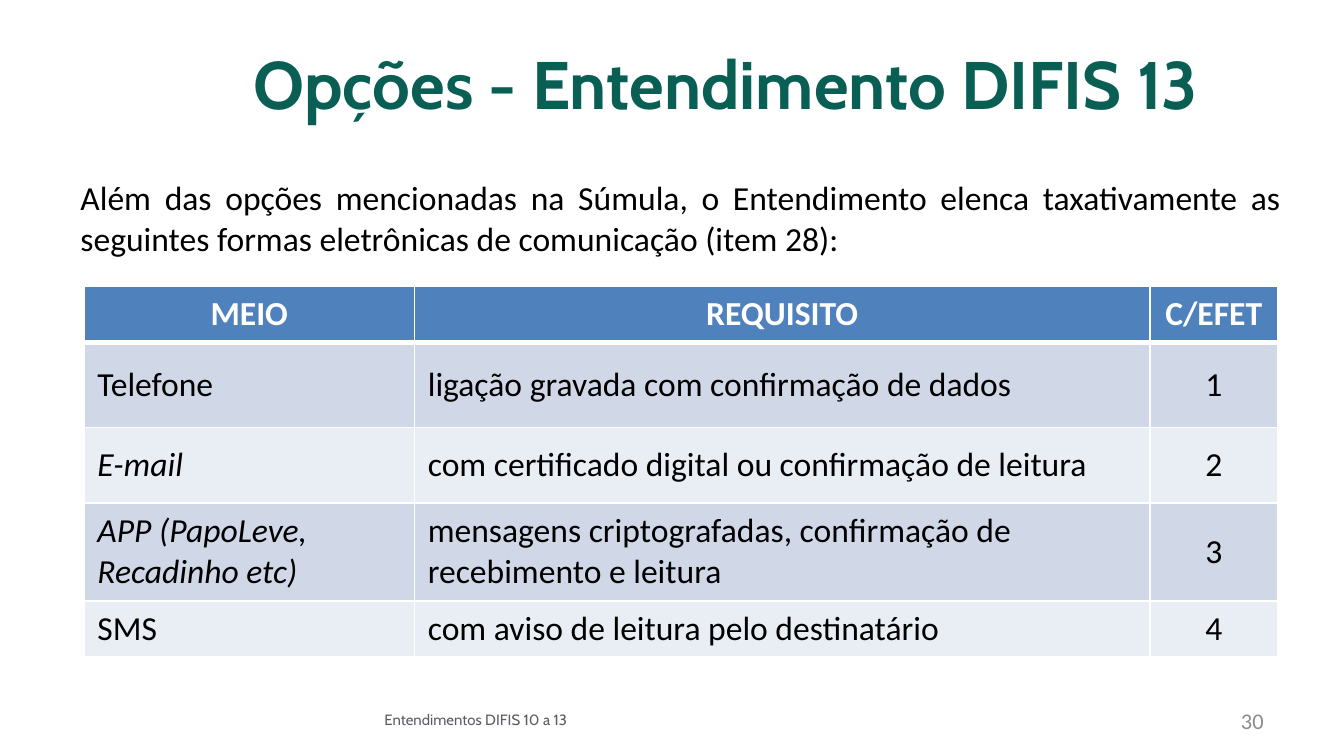
from lxml import etree
from pptx import Presentation
from pptx.dml.color import RGBColor
from pptx.enum import text
from pptx.oxml import ns
from pptx.util import Pt

LEFT, CENTER, RIGHT, JUSTIFY = (
    text.PP_ALIGN.LEFT, text.PP_ALIGN.CENTER, text.PP_ALIGN.RIGHT, text.PP_ALIGN.JUSTIFY)
TOP, MIDDLE = text.MSO_ANCHOR.TOP, text.MSO_ANCHOR.MIDDLE

COLUMN_WIDTHS = [177, 394, 68.5]
ROW_HEIGHTS = [30, 45.5, 40.5, 52.5, 30]
HEADINGS = ["MEIO", "REQUISITO", "C/EFET"]
# Medium, its requirement, and whether the medium is in italics
OPTIONS = [
    ("Telefone", "ligação gravada com confirmação de dados", False),
    ("E-mail", "com certificado digital ou confirmação de leitura", True),
    ("APP (PapoLeve, Recadinho etc)",
     "mensagens criptografadas, confirmação de recebimento e leitura", True),
    ("SMS", "com aviso de leitura pelo destinatário", False),
]


def rgb(value):
    return RGBColor.from_string(value)


def write(frame, words, size, color, align, font="Calibri", bold=False, italic=False):
    paragraph = frame.paragraphs[0]
    paragraph.alignment = align
    run = paragraph.add_run()
    run.text = words
    run.font.name, run.font.size = font, Pt(size)
    run.font.bold, run.font.italic = bold, italic
    run.font.color.rgb = rgb(color)


def add_text(slide, box, words, size, color, align, anchor=MIDDLE, **style):
    frame = slide.shapes.add_textbox(*map(Pt, box)).text_frame
    frame.word_wrap = True
    frame.vertical_anchor = anchor
    write(frame, words, size, color, align, **style)


def set_borders(cell, color, bottom_width):
    properties = cell._tc.get_or_add_tcPr()
    sides = [("lnL", 1), ("lnR", 1), ("lnT", 1), ("lnB", bottom_width)]
    # Border lines come before the fill
    for position, (side, width) in enumerate(sides):
        line = etree.Element(ns.qn(f"a:{side}"), w=str(Pt(width)))
        fill = etree.SubElement(line, ns.qn("a:solidFill"))
        etree.SubElement(fill, ns.qn("a:srgbClr"), val=color)
        properties.insert(position, line)


def fill_cell(cell, words, fill, color, align, anchor=MIDDLE, bottom_width=1, **style):
    cell.fill.solid()
    cell.fill.fore_color.rgb = rgb(fill)
    cell.vertical_anchor = anchor
    set_borders(cell, "FFFFFF", bottom_width)
    write(cell.text_frame, words, 18, color, align, **style)


def add_options_table(slide):
    table = slide.shapes.add_table(
        len(ROW_HEIGHTS), len(COLUMN_WIDTHS), Pt(45), Pt(153.5),
        Pt(sum(COLUMN_WIDTHS)), Pt(sum(ROW_HEIGHTS))).table
    for column, width in zip(table.columns, COLUMN_WIDTHS):
        column.width = Pt(width)
    for row, height in zip(table.rows, ROW_HEIGHTS):
        row.height = Pt(height)

    # Heading row
    for column, heading in enumerate(HEADINGS):
        fill_cell(table.cell(0, column), heading, "4F81BD", "FFFFFF", CENTER,
                  anchor=TOP, bottom_width=3, bold=True)

    # Numbered options on alternating bands
    for number, (medium, requirement, italic) in enumerate(OPTIONS, start=1):
        band = "D0D8E8" if number % 2 else "E9EDF4"
        fill_cell(table.cell(number, 0), medium, band, "000000", LEFT, italic=italic)
        fill_cell(table.cell(number, 1), requirement, band, "000000", LEFT)
        fill_cell(table.cell(number, 2), str(number), band, "000000", CENTER)


def main():
    deck = Presentation()
    deck.slide_width, deck.slide_height = Pt(720), Pt(405)
    slide = deck.slides.add_slide(deck.slide_layouts[6])

    # Title
    add_text(slide, (102, 10, 582, 68), "Opções - Entendimento DIFIS 13 ",
             36, "0A5F55", CENTER, font="Cabin", bold=True)

    # Footer and slide number
    add_text(slide, (516, 375, 168, 21.5), "30", 12, "8C8C8C", RIGHT)
    add_text(slide, (36, 375, 438, 21.5), "Entendimentos DIFIS 10 a 13",
             8, "5B5C65", CENTER, font="Cabin")

    # Introduction
    add_text(slide, (36, 91.5, 657.5, 94.5),
             "Além das opções mencionadas na Súmula, o Entendimento elenca taxativamente "
             "as seguintes formas eletrônicas de comunicação (item 28): ",
             18, "000000", JUSTIFY, anchor=TOP)

    add_options_table(slide)
    deck.save("out.pptx")


if __name__ == "__main__":
    main()
